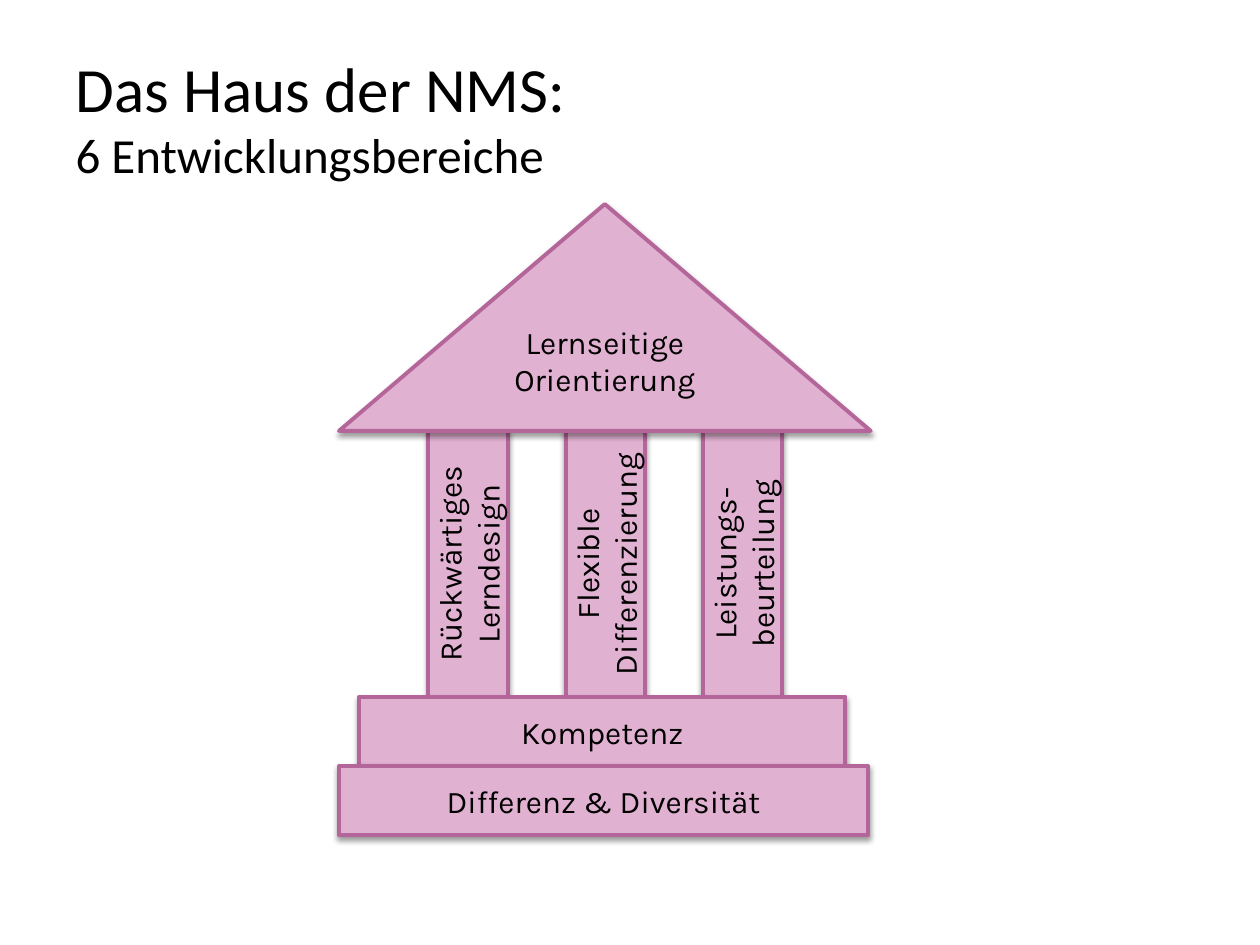
"""Builds a slide showing the house of the NMS with its six areas of development."""
from lxml import etree
from pptx import Presentation
from pptx import util as u
from pptx.dml.color import RGBColor
from pptx.enum import shapes, text
from pptx.oxml import ns

BLACK = RGBColor(0x00, 0x00, 0x00)
PINK = RGBColor(0xE1, 0xB1, 0xD1)
PLUM = RGBColor(0xB4, 0x66, 0x9A)
RECT = shapes.MSO_SHAPE.RECTANGLE
ROOF = shapes.MSO_SHAPE.ISOSCELES_TRIANGLE

LEFT, ROOF_TOP, ROOF_H = 2.69, 1.62, 1.8
COL_LEFT, COL_W, COL_H, COL_STEP = 3.4, 0.63, 2.11, 1.09
BASE_H = 0.55
COL_TOP = ROOF_TOP + ROOF_H
BASE_TOP = COL_TOP + COL_H


def add_shadow(sp):
    sp.shadow.inherit = False
    effects = sp._element.spPr.find(ns.qn("a:effectLst"))
    shadow = etree.SubElement(
        effects, ns.qn("a:outerShdw"), blurRad=str(u.Pt(3.1)),
        dist=str(u.Pt(1.6)), dir="5400000", rotWithShape="0")
    color = etree.SubElement(shadow, ns.qn("a:srgbClr"), val="000000")
    etree.SubElement(color, ns.qn("a:alpha"), val="38000")


def add_block(s, kind, label, *box):
    sp = s.shapes.add_shape(kind, *[u.Inches(v) for v in box])
    sp.fill.solid()
    sp.fill.fore_color.rgb = PINK
    sp.line.color.rgb = PLUM
    sp.line.width = u.Pt(2.25)
    add_shadow(sp)
    tf = sp.text_frame
    tf.word_wrap = True
    p = tf.paragraphs[0]
    p.text = label
    p.alignment = text.PP_ALIGN.CENTER
    p.font.size = u.Pt(18)
    p.font.name = "Karla"
    p.font.color.rgb = BLACK
    return sp


prs = Presentation()
prs.slide_width, prs.slide_height = u.Inches(10), u.Inches(7.5)
s = prs.slides.add_slide(prs.slide_layouts[5])

title = s.shapes.title
title.left, title.top = u.Inches(0.5), u.Inches(0.3)
title.width, title.height = u.Inches(7.18), u.Inches(1.25)
tf = title.text_frame
tf.vertical_anchor = text.MSO_ANCHOR.MIDDLE
p = tf.paragraphs[0]
p.alignment = text.PP_ALIGN.LEFT
p.font.name = "Calibri"
p.font.color.rgb = BLACK
p.text = "Das Haus der NMS:\v6 Entwicklungsbereiche"
for r, size in zip(p.runs, (36, 28)):
    r.font.size = u.Pt(size)
    r.font.name = "Calibri"
    r.font.color.rgb = BLACK

columns = ("Rückwärtiges Lerndesign", "Flexible Differenzierung",
           "Leistungs-beurteilung")
for i, label in enumerate(columns):
    sp = add_block(s, RECT, label, COL_LEFT + i * COL_STEP, COL_TOP, COL_W, COL_H)
    sp.text_frame._txBody.bodyPr.set("vert", "vert270")

add_block(s, RECT, "Kompetenz", 2.85, BASE_TOP, 3.86, BASE_H)

roof = add_block(s, ROOF, "Lernseitige Orientierung", LEFT, ROOF_TOP, 4.22, ROOF_H)
tf = roof.text_frame
tf.vertical_anchor = text.MSO_ANCHOR.TOP
tf.margin_left = tf.margin_right = tf.margin_top = tf.margin_bottom = u.Inches(0.04)

add_block(s, RECT, "Differenz & Diversität", LEFT, BASE_TOP + BASE_H, 4.2, BASE_H)

prs.save("out.pptx")
